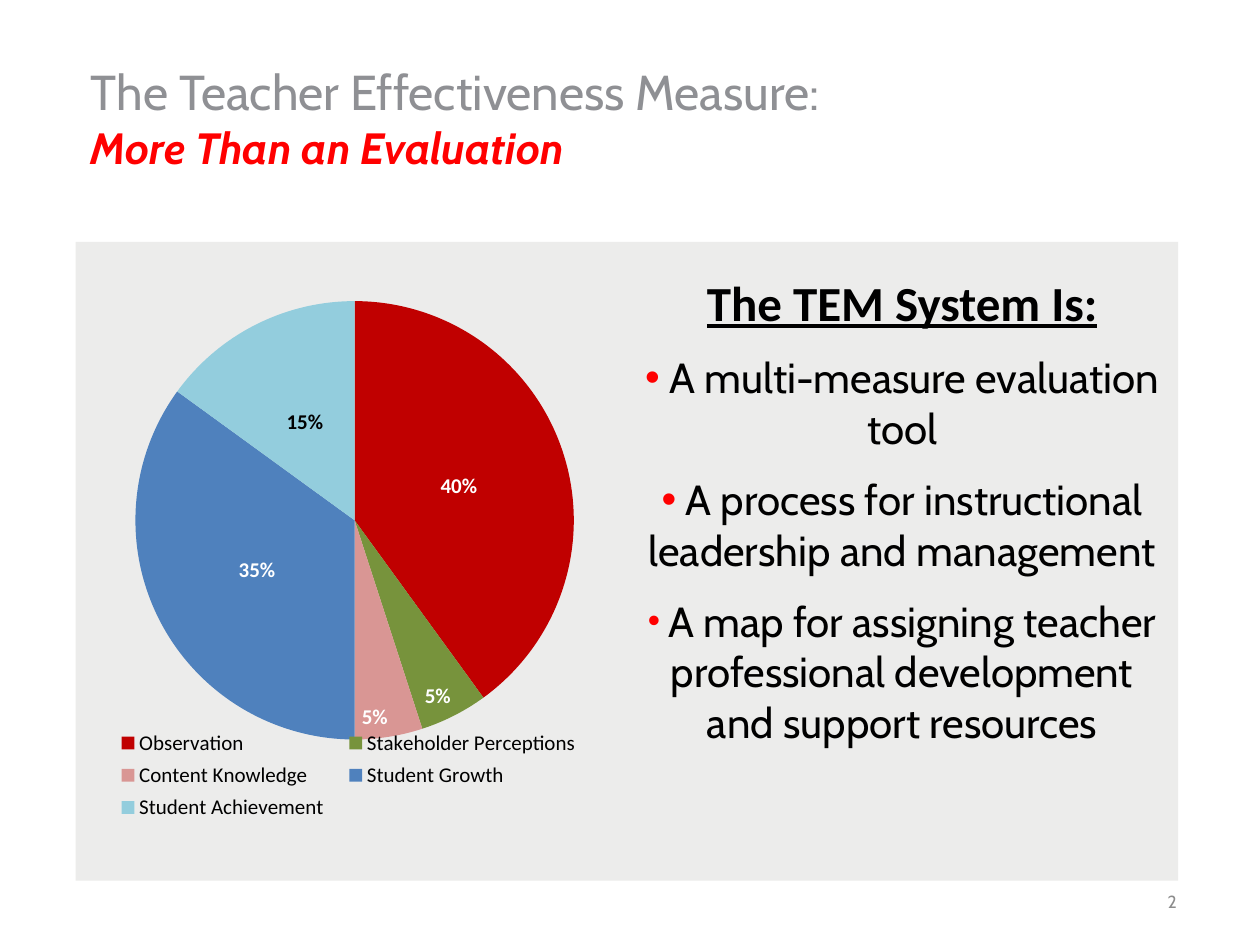
from lxml import etree
from pptx import Presentation
from pptx.chart.data import CategoryChartData
from pptx.dml.color import RGBColor
from pptx.enum.chart import XL_CHART_TYPE, XL_LABEL_POSITION as LabelPos, XL_LEGEND_POSITION
from pptx.enum.shapes import MSO_SHAPE
from pptx.enum.text import MSO_ANCHOR, PP_ALIGN
from pptx.oxml import parse_xml
from pptx.oxml.ns import nsdecls, qn
from pptx.util import Inches, Pt

COLORS = {
    "panel": "ECECEB", "title": "8F9094", "number": "8C8C8C",
    "accent": "FF0000", "text": "000000", "white": "FFFFFF",
}
MEASURES = [  # name, share, slice colour
    ("Observation", 0.4, "C00000"),
    ("Stakeholder Perceptions", 0.05, "77933C"),
    ("Content Knowledge", 0.05, "D99694"),
    ("Student Growth", 0.35, "4F81BD"),
    ("Student Achievement", 0.15, "93CDDD"),
]
BULLETS = [  # runs of (text, font, size, bold)
    [(" ", "Calibri", 24, True), ("A multi-measure evaluation tool", "Cabin", 24, False)],
    [(" A process for instructional leadership and management", "Cabin", 24, False)],
    [(" ", "Cabin", 20, False),
     ("A map for assigning teacher professional development and support resources",
      "Cabin", 24, False)],
]


def rgb(name):
    return RGBColor.from_string(COLORS[name])


def style(font, size, color, name="Cabin", bold=False):
    font.name, font.size, font.bold = name, Pt(size), bold
    font.color.rgb = rgb(color)


def add_run(p, text, size, color, name="Cabin", bold=False):
    r = p.add_run()
    r.text = text
    style(r.font, size, color, name, bold)
    return r


def place(sp, left, top, width, height):
    sp.left, sp.top, sp.width, sp.height = map(Inches, (left, top, width, height))


def setup_frame(tf, anchor, inset=None):
    tf.word_wrap = True
    tf.vertical_anchor = anchor
    if inset is not None:
        tf.margin_left = tf.margin_right = tf.margin_top = tf.margin_bottom = inset


def add_bullet(p):
    pPr = p._p.get_or_add_pPr()
    pPr.set("marL", "0")
    pPr.set("indent", "0")
    color = etree.SubElement(pPr, qn("a:buClr"))
    etree.SubElement(color, qn("a:srgbClr"), val=COLORS["accent"])
    etree.SubElement(pPr, qn("a:buFont"), typeface="Arial")
    etree.SubElement(pPr, qn("a:buChar"), char="•")


def layout_xml(x, y, w, h, inner=False):
    target = '<c:layoutTarget val="inner"/>' if inner else ""
    return parse_xml(
        f'<c:layout {nsdecls("c")}><c:manualLayout>{target}'
        '<c:xMode val="edge"/><c:yMode val="edge"/>'
        f'<c:x val="{x}"/><c:y val="{y}"/><c:w val="{w}"/><c:h val="{h}"/>'
        '</c:manualLayout></c:layout>')


def add_title(s):
    sp = s.shapes.title
    place(sp, 0.72, 0.49, 7.03, 1.25)
    tf = sp.text_frame
    setup_frame(tf, MSO_ANCHOR.TOP, 0)
    p = tf.paragraphs[0]
    add_run(p, "The Teacher Effectiveness Measure:", 28, "title")
    subtitle = tf.add_paragraph()
    add_run(subtitle, "More Than an Evaluation", 25, "accent", bold=True).font.italic = True
    for p in tf.paragraphs:
        p.alignment = PP_ALIGN.LEFT


def add_panel(s):
    sp = s.shapes.add_shape(MSO_SHAPE.RECTANGLE, Inches(0.6), Inches(1.92),
                            Inches(8.75), Inches(5.07))
    sp.shadow.inherit = False
    sp.fill.solid()
    sp.fill.fore_color.rgb = rgb("panel")
    sp.line.fill.background()


def add_pie(s):
    data = CategoryChartData(number_format="0%")
    data.categories = [name for name, _, _ in MEASURES]
    data.add_series("Series 1", [share for _, share, _ in MEASURES])
    chart = s.shapes.add_chart(XL_CHART_TYPE.PIE, Inches(0.38), Inches(2.26),
                               Inches(4.87), Inches(4.35), data).chart
    style(chart.font, 18, "text", "Calibri")
    chart.has_title = False

    # Legend below the pie
    chart.has_legend = True
    legend = chart.legend
    legend.position = XL_LEGEND_POSITION.BOTTOM
    legend.include_in_layout = False
    style(legend.font, 12, "text", "Calibri")
    legend._element.find(qn("c:legendPos")).addnext(layout_xml(0.09, 0.8, 0.8, 0.19))

    # Plot position
    plot_area = chart._chartSpace.chart.plotArea
    for old in plot_area.findall(qn("c:layout")):
        plot_area.remove(old)
    plot_area.insert(0, layout_xml(0.14, 0.03, 0.72, 0.8, inner=True))

    # Labels and slice colours
    plot = chart.plots[0]
    plot.vary_by_categories = True
    series = plot.series[0]
    labels = series.data_labels
    labels.show_value = True
    labels.show_percentage = False
    labels.number_format = "0%"
    labels.number_format_is_linked = False
    labels.position = LabelPos.CENTER
    style(labels.font, 12, "white", "Calibri", True)
    for i, (name, share, color) in enumerate(MEASURES):
        point = series.points[i]
        point.format.fill.solid()
        point.format.fill.fore_color.rgb = RGBColor.from_string(color)
        if share < 0.1:
            style(point.data_label.font, 12, "white", "Calibri", True)
            point.data_label.position = LabelPos.INSIDE_END
        elif name == "Student Achievement":
            style(point.data_label.font, 12, "text", "Calibri", True)
            point.data_label.position = LabelPos.CENTER


def add_system_text(s):
    sp = s.shapes.add_textbox(Inches(4.98), Inches(2.11), Inches(4.36), Inches(5.94))
    tf = sp.text_frame
    setup_frame(tf, MSO_ANCHOR.TOP)
    p = tf.paragraphs[0]
    p.alignment = PP_ALIGN.CENTER
    add_run(p, "The TEM System Is:", 28, "text", "Calibri", True).font.underline = True
    for runs in BULLETS:
        p = tf.add_paragraph()
        p.alignment = PP_ALIGN.CENTER
        p.space_before = Pt(12)
        add_bullet(p)
        for text, font, size, bold in runs:
            add_run(p, text, size, "text", font, bold)


def add_slide_number(s):
    sp = s.shapes.add_textbox(Inches(7.01), Inches(6.84), Inches(2.33), Inches(0.4))
    setup_frame(sp.text_frame, MSO_ANCHOR.BOTTOM, 0)
    p = sp.text_frame.paragraphs[0]
    p.alignment = PP_ALIGN.RIGHT
    add_run(p, "2", 10, "number")


def main():
    prs = Presentation()
    prs.slide_width, prs.slide_height = Inches(10), Inches(7.5)
    s = prs.slides.add_slide(prs.slide_layouts[5])
    add_panel(s)
    add_slide_number(s)
    add_title(s)
    add_pie(s)
    add_system_text(s)
    prs.save("out.pptx")


if __name__ == "__main__":
    main()
